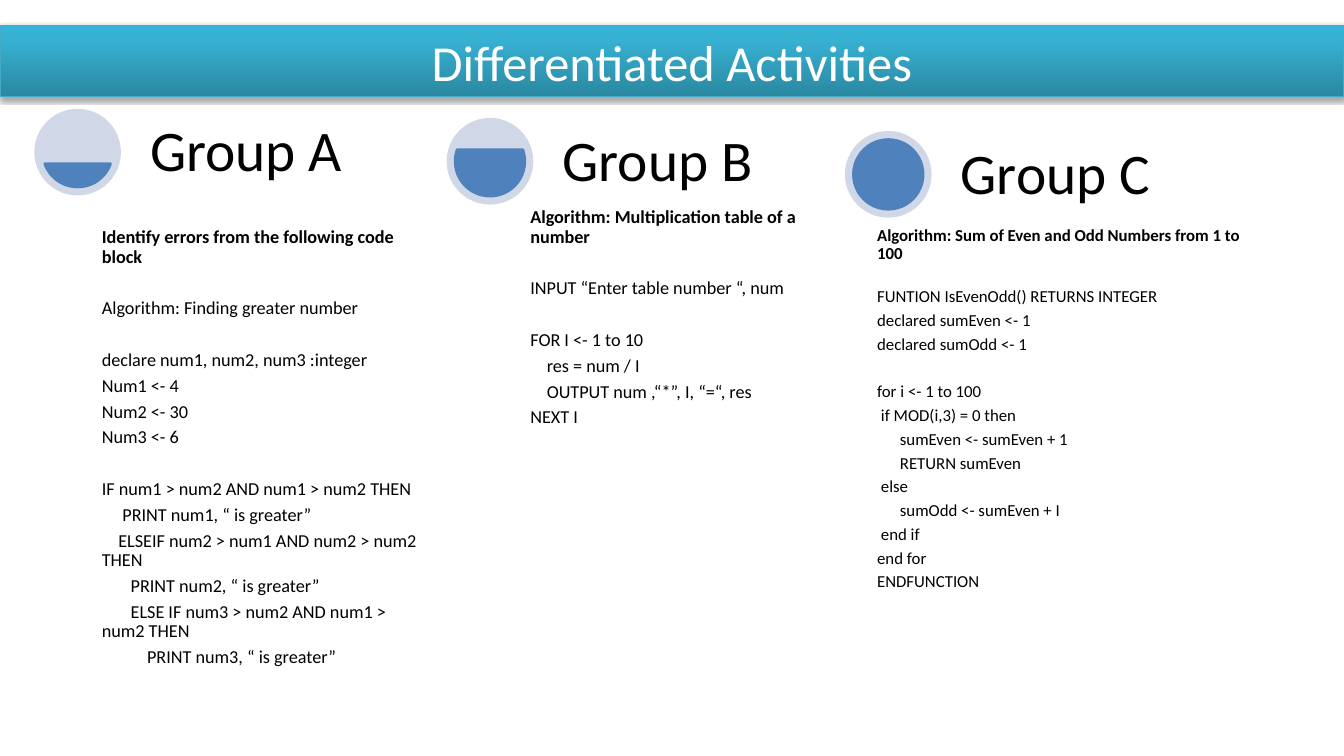
from copy import deepcopy

from lxml import etree
from pptx import Presentation
from pptx.dml.color import RGBColor
from pptx.enum.shapes import MSO_SHAPE
from pptx.enum.text import MSO_ANCHOR, MSO_AUTO_SIZE, PP_ALIGN
from pptx.oxml.ns import qn
from pptx.util import Inches, Pt

OVAL, CHORD = MSO_SHAPE.OVAL, MSO_SHAPE.CHORD
TOP, MIDDLE, BOTTOM = MSO_ANCHOR.TOP, MSO_ANCHOR.MIDDLE, MSO_ANCHOR.BOTTOM
FIXED, CENTER = MSO_AUTO_SIZE.NONE, PP_ALIGN.CENTER

BLACK = RGBColor(0x00, 0x00, 0x00)
WHITE = RGBColor(0xFF, 0xFF, 0xFF)
PALE_BLUE = RGBColor(0xD0, 0xD8, 0xE8)
BLUE = RGBColor(0x4F, 0x81, 0xBD)
TEAL_EDGE = RGBColor(0x46, 0xAA, 0xC5)
TEAL_STOPS = [
    (0, RGBColor(0x2A, 0x88, 0xA2)),
    (0.8, RGBColor(0x37, 0xB1, 0xD2)),
    (1, RGBColor(0x34, 0xB4, 0xD6)),
]

SPACE_EM = 0.226
DIAL = 0.86
DIAL_FILL = 0.69

GROUPS = [
    {
        "name": "Group A", "at": (0.34, 1.08), "chord": (11.683, 96.317),
        "body": (0.97, 2.22, 3.21, 4.84), "inset": 0.04, "size": 13,
        "task": "Identify errors from the following code block",
        "code": [
            (18.6, 0, "Algorithm: Finding greater number"),
            (18.6, 0, "declare num1, num2, num3 :integer"),
            (0, 0, "Num1 <- 4"),
            (0, 0, "Num2 <- 30"),
            (0, 0, "Num3 <- 6"),
            (18.6, 0, "IF num1 > num2 AND num1 > num2 THEN"),
            (0, 5, "PRINT num1, “ is greater”"),
            (0, 4, "ELSEIF num2 > num1 AND num2 > num2 THEN"),
            (0, 7, "PRINT num2, “ is greater”"),
            (0, 7, "ELSE IF num3 > num2 AND num1 > num2 THEN"),
            (0, 11, "PRINT num3, “ is greater”"),
        ],
    },
    {
        "name": "Group B", "at": (4.43, 1.17), "chord": (204.317, 119.683),
        "body": (5.22, 2.02, 2.93, 4.78), "inset": 0.04, "size": 13,
        "task": "Algorithm: Multiplication table of a number",
        "code": [
            (18.6, 0, "INPUT “Enter table number “, num"),
            (18.6, 0, "FOR I <- 1 to 10"),
            (0, 4, "res = num / I"),
            (0, 4, "OUTPUT num ,“*”, I, “=“, res"),
            (0, 0, "NEXT I"),
        ],
    },
    {
        "name": "Group C", "at": (8.38, 1.3), "chord": (162, 162),
        "body": (8.67, 2.22, 3.94, 4.27), "inset": 0.03, "size": 12,
        "task": "Algorithm: Sum of Even and Odd Numbers from 1 to 100",
        "code": [
            (14, 0, "FUNTION IsEvenOdd() RETURNS INTEGER"),
            (0, 0, "declared sumEven <- 1"),
            (0, 0, "declared sumOdd <- 1"),
            (17.1, 0, "for i <- 1 to 100"),
            (0, 1, "if MOD(i,3) = 0 then"),
            (0, 6, "sumEven <- sumEven + 1"),
            (0, 6, "RETURN sumEven"),
            (0, 1, "else"),
            (0, 6, "sumOdd <- sumEven + I"),
            (0, 1, "end if"),
            (0, 0, "end for"),
            (0, 0, "ENDFUNCTION"),
        ],
    },
]


class ActivitySlide:
    font = "Calibri"

    def __init__(self, deck):
        self.slide = deck.slides.add_slide(deck.slide_layouts[5])

    def run(self, paragraph, text, size, color=BLACK, bold=False):
        run = paragraph.add_run()
        run.text = text
        run.font.name = self.font
        run.font.size = Pt(size)
        run.font.bold = bold
        run.font.color.rgb = color

    def banner(self, text, left, top, width, height):
        title = self.slide.shapes.title
        title.left, title.top = Inches(left), Inches(top)
        title.width, title.height = Inches(width), Inches(height)
        title.fill.gradient()
        title.fill.gradient_angle = 90
        properties = title._element.spPr
        stops = properties.find(qn("a:gradFill")).find(qn("a:gsLst"))
        stops.append(deepcopy(stops[-1]))
        for stop, (position, color) in zip(title.fill.gradient_stops, TEAL_STOPS):
            stop.position = position
            stop.color.rgb = color
        title.line.color.rgb = TEAL_EDGE
        title.line.width = Pt(0.75)
        effects = etree.SubElement(properties, qn("a:effectLst"))
        shadow = etree.SubElement(
            effects, qn("a:outerShdw"), blurRad=str(Pt(3.1)), dist=str(Pt(1.8)),
            dir="5400000", rotWithShape="0")
        shade = etree.SubElement(shadow, qn("a:srgbClr"), val=str(BLACK))
        etree.SubElement(shade, qn("a:alpha"), val="35000")
        frame = title.text_frame
        frame.auto_size = FIXED
        frame.word_wrap = True
        frame.vertical_anchor = MIDDLE
        frame.paragraphs[0].alignment = CENTER
        self.run(frame.paragraphs[0], text, 36, WHITE)

    def disc(self, kind, left, top, diameter, color):
        disc = self.slide.shapes.add_shape(
            kind, Inches(left), Inches(top), Inches(diameter), Inches(diameter))
        disc.shadow.inherit = False
        disc.fill.solid()
        disc.fill.fore_color.rgb = color
        disc.line.fill.background()
        return disc

    def dial(self, left, top, angles):
        self.disc(OVAL, left, top, DIAL, PALE_BLUE)
        margin = (DIAL - DIAL_FILL) / 2
        level = self.disc(CHORD, left + margin, top + margin, DIAL_FILL, BLUE)
        level.line.color.rgb = BLUE
        level.line.width = Pt(2)
        for index, angle in enumerate(angles):
            level.adjustments[index] = angle

    def text_box(self, left, top, width, height, inset, anchor):
        box = self.slide.shapes.add_textbox(
            Inches(left), Inches(top), Inches(width), Inches(height))
        frame = box.text_frame
        frame.word_wrap = True
        frame.auto_size = FIXED
        frame.vertical_anchor = anchor
        frame.margin_left = frame.margin_right = Inches(inset)
        frame.margin_top = frame.margin_bottom = Inches(inset)
        frame.paragraphs[0].line_spacing = 0.9
        return frame

    def heading(self, text, left, top):
        frame = self.text_box(left, top, 2.54, DIAL, 0.11, BOTTOM)
        self.run(frame.paragraphs[0], text, 41)

    def activity(self, place, inset, size, task, code):
        frame = self.text_box(*place, inset, TOP)
        after = Pt(round(size * 0.33, 1))
        frame.paragraphs[0].space_after = after
        self.run(frame.paragraphs[0], task, size, bold=True)
        for gap, indent, text in code:
            line = frame.add_paragraph()
            line.line_spacing = 0.9
            line.space_before = Pt(gap)
            line.space_after = after
            settings = line._p.get_or_add_pPr()
            settings.set("marL", "0")
            settings.set("indent", str(Pt(indent * SPACE_EM * size)))
            self.run(line, text, size)


def main():
    deck = Presentation()
    deck.slide_width, deck.slide_height = Inches(13.33), Inches(7.5)
    page = ActivitySlide(deck)
    page.banner("Differentiated Activities", 0, 0.25, 13.33, 0.71)
    for group in GROUPS:
        left, top = group["at"]
        page.dial(left, top, group["chord"])
        page.activity(group["body"], group["inset"], group["size"],
                      group["task"], group["code"])
        page.heading(group["name"], left + 1.04, top)
    deck.save("out.pptx")


if __name__ == "__main__":
    main()
